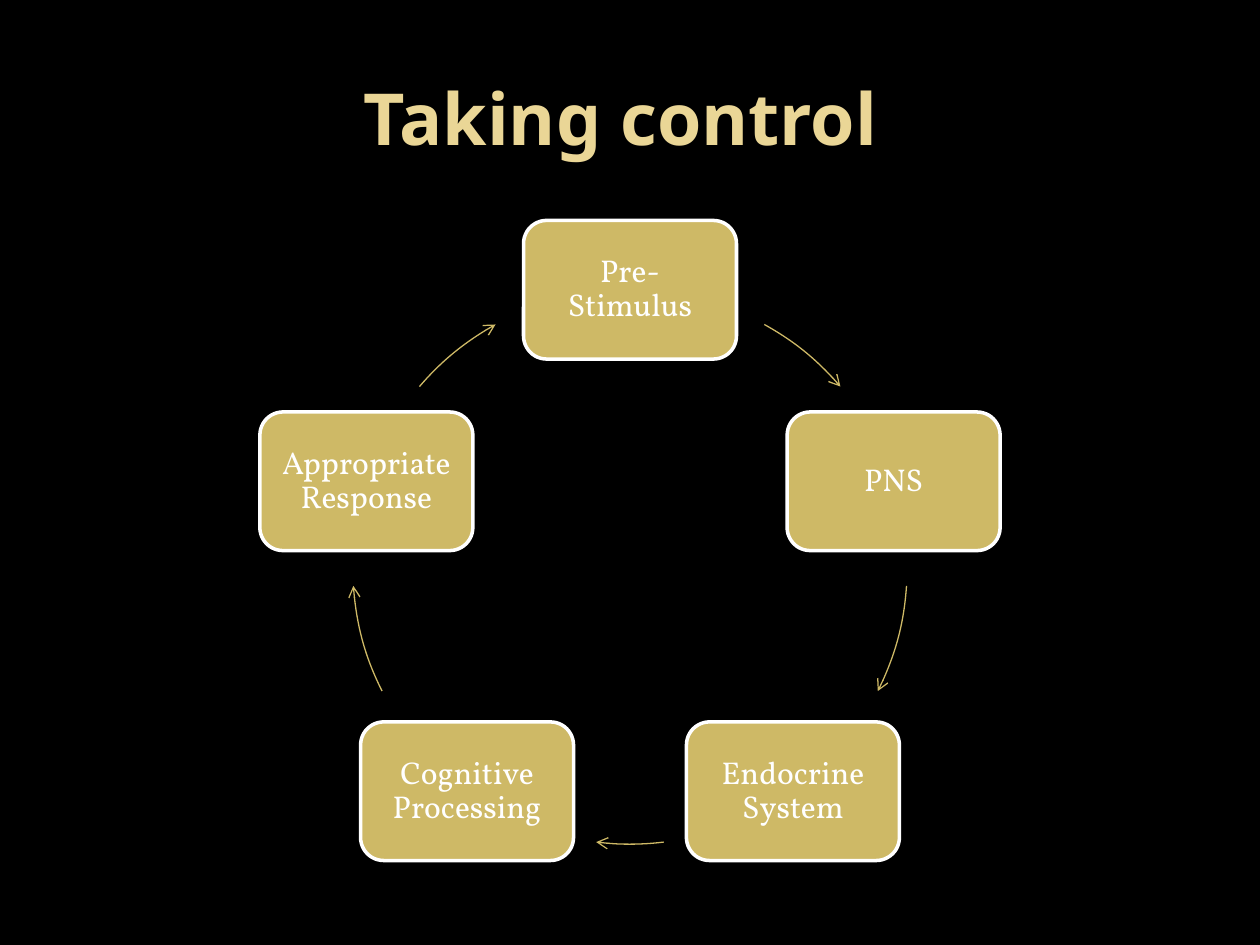
from math import cos, radians, sin

from lxml.etree import SubElement
from pptx import Presentation
from pptx.dml.color import RGBColor
from pptx.enum.shapes import MSO_SHAPE
from pptx.enum.text import MSO_ANCHOR, PP_ALIGN
from pptx.oxml.ns import qn
from pptx.util import Inches, Pt

BLACK = RGBColor(0x00, 0x00, 0x00)
WHITE = RGBColor(0xFF, 0xFF, 0xFF)
GOLD = RGBColor(0xCE, 0xB9, 0x66)
PALE_GOLD = RGBColor(0xEA, 0xD6, 0x96)

TITLE = "Taking control "
STAGES = [
    ("Pre-Stimulus", (-61, -40.6)),
    ("PNS", (3.9, 26.6)),
    ("Endocrine System", (83, 97)),
    ("Cognitive Processing", (153.4, 176.1)),
    ("Appropriate Response", (220.6, 241)),
]

WIDTH, HEIGHT = Inches(10), Inches(7.5)
CENTER_X, CENTER_Y = WIDTH * 0.5, HEIGHT * 0.6
RADIUS = WIDTH * 0.22
BOX_WIDTH, BOX_HEIGHT = Inches(1.69), Inches(1.1)
BOX_MARGIN = Inches(0.07)
ARC_UNITS_PER_DEGREE = 0.6

TITLE_FONT = {"name": "Noto Sans", "size": Pt(41), "bold": True}
STAGE_FONT = {"name": "Vollkorn", "size": Pt(18), "bold": False}
TITLE_FRAME = {"word_wrap": True, "vertical_anchor": MSO_ANCHOR.MIDDLE}
STAGE_FRAME = TITLE_FRAME | {
    f"margin_{side}": BOX_MARGIN for side in ("left", "top", "right", "bottom")
}


def set_all(target, values):
    for name, value in values.items():
        setattr(target, name, value)


def write(shape, text, frame_format, font_format, color, spacing):
    frame = shape.text_frame
    set_all(frame, frame_format)
    para = frame.paragraphs[0]
    set_all(para, {"alignment": PP_ALIGN.CENTER, "line_spacing": spacing})
    span = para.add_run()
    span.text = text
    set_all(span.font, font_format)
    span.font.color.rgb = color


def add_outlined(page, kind, center, size, color, weight):
    (x, y), (width, height) = center, size
    shape = page.shapes.add_shape(
        kind, int(x - width / 2), int(y - height / 2), int(width), int(height)
    )
    shape.shadow.inherit = False
    shape.line.color.rgb = color
    shape.line.width = Pt(weight)
    return shape


def add_stage(page, text, angle):
    center = (
        CENTER_X + RADIUS * cos(radians(angle)),
        CENTER_Y + RADIUS * sin(radians(angle)),
    )
    box = add_outlined(
        page, MSO_SHAPE.ROUNDED_RECTANGLE, center, (BOX_WIDTH, BOX_HEIGHT), WHITE, 2
    )
    box.fill.solid()
    box.fill.fore_color.rgb = GOLD
    write(box, text, STAGE_FRAME, STAGE_FONT, WHITE, 0.9)


def add_arc_arrow(page, angles):
    arc = add_outlined(
        page, MSO_SHAPE.ARC, (CENTER_X, CENTER_Y), (RADIUS * 2, RADIUS * 2), GOLD, 0.75
    )
    arc.fill.background()
    for index, angle in enumerate(angles):
        arc.adjustments[index] = angle % 360 * ARC_UNITS_PER_DEGREE
    SubElement(arc.line._get_or_add_ln(), qn("a:tailEnd"), type="arrow")


def main():
    deck = Presentation()
    set_all(deck, {"slide_width": WIDTH, "slide_height": HEIGHT})
    page = deck.slides.add_slide(deck.slide_layouts[5])
    page.background.fill.solid()
    page.background.fill.fore_color.rgb = BLACK

    title = page.shapes.title
    set_all(title, {
        "left": int(WIDTH * 0.05), "top": int(HEIGHT * 0.04),
        "width": int(WIDTH * 0.9), "height": Inches(1.25),
    })
    write(title, TITLE, TITLE_FRAME, TITLE_FONT, PALE_GOLD, 1.0)

    for index, (text, arrow_angles) in enumerate(STAGES):
        add_stage(page, text, 360 / len(STAGES) * index - 90)
        add_arc_arrow(page, arrow_angles)

    deck.save("out.pptx")


if __name__ == "__main__":
    main()
